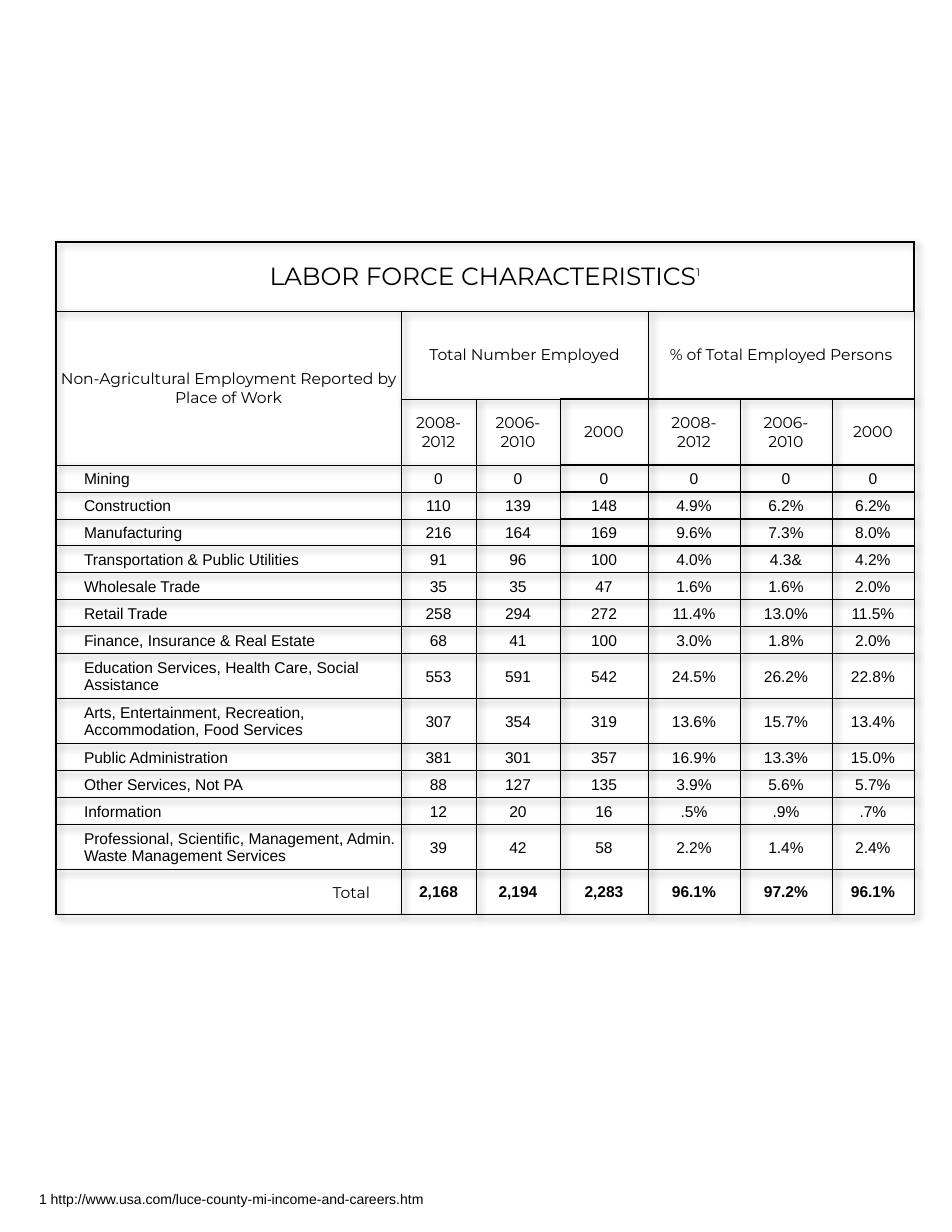
"""Build the labor force characteristics table page."""
from lxml.etree import SubElement, Element
from pptx import Presentation
from pptx.dml.color import RGBColor as Color
from pptx.enum.text import MSO_ANCHOR as Anchor, PP_ALIGN as Align
from pptx.oxml.ns import qn
from pptx.util import Emu, Pt

PX = 914400 / 112
COLORS = {"ink": "000000"}
COLUMNS = [345, 75, 84, 88, 92, 92, 82]
HEADER_ROWS = [69, 88, 66]
LINE, DOUBLE = 27, 45
BODY = [
    ("Mining", "0", "0", "0", "0", "0", "0"),
    ("Construction", "110", "139", "148", "4.9%", "6.2%", "6.2%"),
    ("Manufacturing", "216", "164", "169", "9.6%", "7.3%", "8.0%"),
    ("Transportation & Public Utilities", "91", "96", "100", "4.0%", "4.3&", "4.2%"),
    ("Wholesale Trade", "35", "35", "47", "1.6%", "1.6%", "2.0%"),
    ("Retail Trade", "258", "294", "272", "11.4%", "13.0%", "11.5%"),
    ("Finance, Insurance & Real Estate", "68", "41", "100", "3.0%", "1.8%", "2.0%"),
    ("Education Services, Health Care, Social Assistance",
     "553", "591", "542", "24.5%", "26.2%", "22.8%"),
    ("Arts, Entertainment, Recreation, Accommodation, Food Services",
     "307", "354", "319", "13.6%", "15.7%", "13.4%"),
    ("Public Administration", "381", "301", "357", "16.9%", "13.3%", "15.0%"),
    ("Other Services, Not PA", "88", "127", "135", "3.9%", "5.6%", "5.7%"),
    ("Information", "12", "20", "16", ".5%", ".9%", ".7%"),
    ("Professional, Scientific, Management, Admin. Waste Management Services",
     "39", "42", "58", "2.2%", "1.4%", "2.4%"),
    ("Total", "2,168", "2,194", "2,283", "96.1%", "97.2%", "96.1%"),
]
ROWS = [
    ("LABOR FORCE CHARACTERISTICS", "", "", "", "", "", ""),
    ("Non-Agricultural Employment Reported by Place of Work",
     "Total Number Employed", "", "", "% of Total Employed Persons", "", ""),
    ("", "2008-2012", "2006-\n2010", "2000", "2008-\n2012", "2006-\n2010", "2000"),
] + BODY
FIRST, LAST = len(HEADER_ROWS), len(ROWS) - 1


def px(count):
    return Emu(round(count * PX))


def add_span(para, text, size, font, bold=False):
    span = para.add_run()
    span.text = text
    span.font.size = Pt(size)
    span.font.name = font
    span.font.bold = bold
    span.font.color.rgb = Color.from_string(COLORS["ink"])
    return span


deck = Presentation()
deck.slide_width, deck.slide_height = px(952), px(1232)
page = deck.slides.add_slide(deck.slide_layouts[6])

heights = HEADER_ROWS + [DOUBLE if len(row[0]) > 40 or row[0] == "Total" else LINE for row in BODY]
frame = page.shapes.add_table(len(ROWS), len(COLUMNS), px(56), px(242),
                              px(sum(COLUMNS)), px(sum(heights)))
table = frame.table
table.first_row = table.horz_banding = False
for column, width in zip(table.columns, COLUMNS):
    column.width = px(width)
for row, height in zip(table.rows, heights):
    row.height = px(height)

effects = Element(qn("a:effectLst"))
shadow = SubElement(effects, qn("a:outerShdw"), blurRad="50800", dist="38100", dir="2700000")
tint = SubElement(shadow, qn("a:srgbClr"), val=COLORS["ink"])
SubElement(tint, qn("a:alpha"), val="40000")
table._tbl.tblPr.insert(0, effects)

for top, left, bottom, right in [(0, 0, 0, 6), (1, 0, 2, 0), (1, 1, 1, 3), (1, 4, 1, 6)]:
    table.cell(top, left).merge(table.cell(bottom, right))

for r, values in enumerate(ROWS):
    for c, text in enumerate(values):
        cell = table.cell(r, c)
        label = c == 0 and r >= FIRST
        total = r == LAST
        cell.vertical_anchor = Anchor.MIDDLE
        cell.margin_left = px(28 if label and not total else 1)
        cell.margin_right = px(31 if label and total else 1)
        cell.margin_top, cell.margin_bottom = px(1), 0

        heavy = 1 if r == 0 or c >= 3 else 0.5
        weights = {
            "L": 1 if c == 0 else 0.5,
            "R": 1 if r == 0 else 0.5,
            "T": 0.5 if r == 1 else heavy,
            "B": 0.5 if r == 0 else heavy,
        }
        for side, weight in weights.items():
            line = SubElement(cell._tc.get_or_add_tcPr(), qn(f"a:ln{side}"), w=str(Pt(weight)))
            fill = SubElement(line, qn("a:solidFill"))
            SubElement(fill, qn("a:srgbClr"), val=COLORS["ink"])
        cell.fill.background()

        if not text:
            continue
        font = "Montserrat" if r < FIRST or label and total else "Arial"
        for index, part in enumerate(text.split("\n")):
            para = cell.text_frame.add_paragraph() if index else cell.text_frame.paragraphs[0]
            para.alignment = Align.CENTER
            if label:
                para.alignment = Align.RIGHT if total else Align.LEFT
            add_span(para, part, 16 if r == 0 else 10, font, total and c > 0)

note_mark = add_span(table.cell(0, 0).text_frame.paragraphs[0], "1", 12, "Montserrat")
note_mark.font._element.set("baseline", "50000")

footnote = page.shapes.add_textbox(px(28), px(1185), px(476), px(28))
footnote.text_frame.word_wrap = True
add_span(footnote.text_frame.paragraphs[0],
         "1 http://www.usa.com/luce-county-mi-income-and-careers.htm", 9, "Arial")

deck.save("out.pptx")
